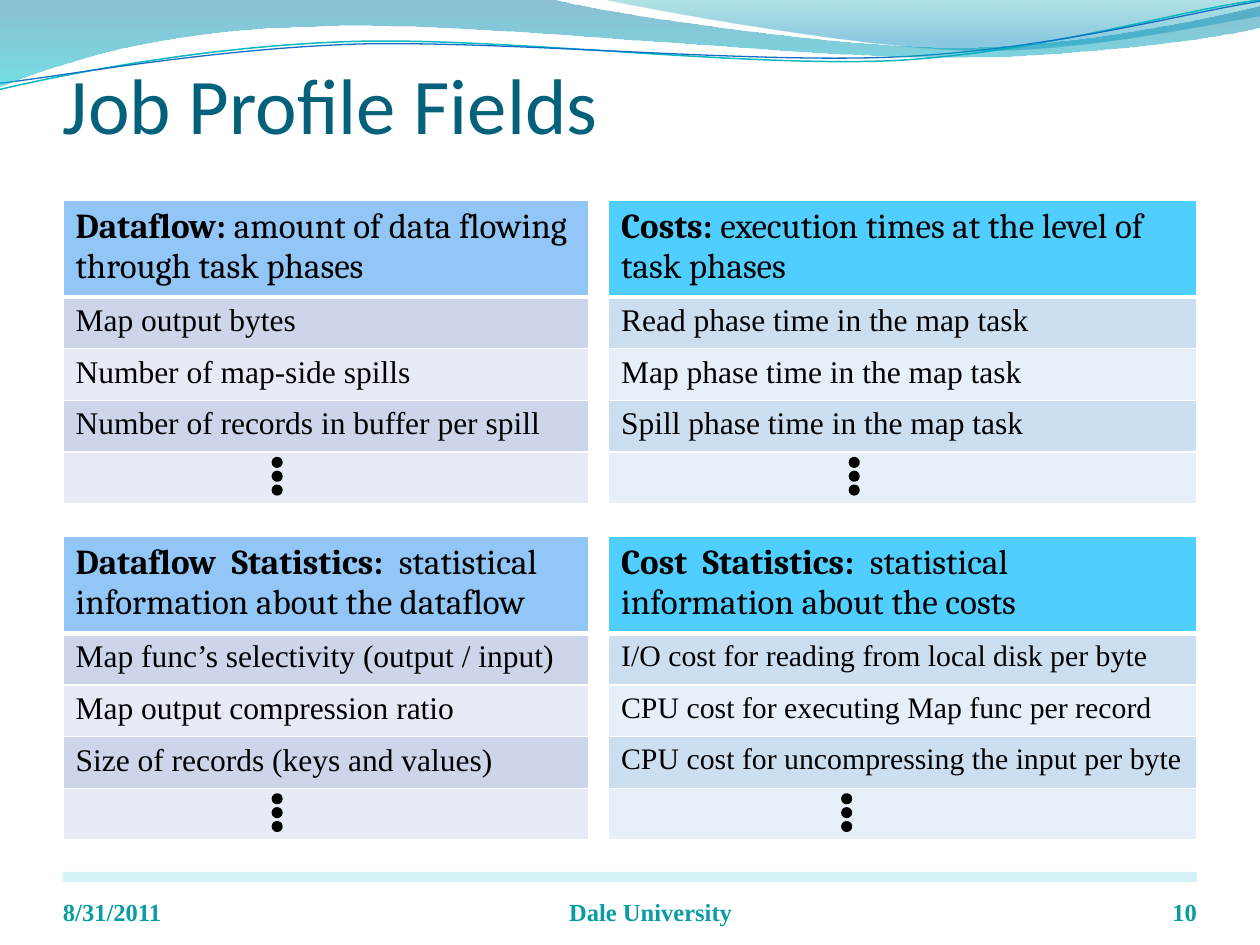
from lxml.etree import SubElement
from pptx import Presentation
from pptx.dml.color import RGBColor
from pptx.enum.shapes import MSO_SHAPE as Preset
from pptx.enum.text import MSO_ANCHOR as Anchor, PP_ALIGN as Align
from pptx.oxml import parse_xml
from pptx.oxml.ns import nsdecls, qn
from pptx.util import Inches, Pt

SERIF = "Times New Roman"
BLUE = ("91C6F7", "CCD5EA", "E7EBF5")
CYAN = ("4FCEFF", "CCDFF1", "E7EFF8")
HEADER_HEIGHT, ROW_HEIGHT = 0.72, 0.41

# left, top, width, palette, body size, dots left, heading, explanation, rows
TABLES = [
    (0.5, 1.59, 4.17, BLUE, 18, 2.17, "Dataflow: ",
     "amount of data flowing through task phases",
     ["Map output bytes", "Number of map-side spills",
      "Number of records in buffer per spill"]),
    (4.83, 1.59, 4.67, CYAN, 18, 6.75, "Costs: ",
     "execution times at the level of task phases",
     ["Read phase time in the map task", "Map phase time in the map task",
      "Spill phase time in the map task"]),
    (0.5, 4.26, 4.17, BLUE, 18, 2.17, "Dataflow  Statistics:  ",
     "statistical information about the dataflow",
     ["Map func’s selectivity (output / input)", "Map output compression ratio",
      "Size of records (keys and values)"]),
    (4.83, 4.26, 4.67, CYAN, 17, 6.69, "Cost  Statistics:  ",
     "statistical information about the costs",
     ["I/O cost for reading from local disk per byte",
      "CPU cost for executing Map func per record",
      "CPU cost for uncompressing the input per byte"]),
]

# Each outline step is a line end (2 numbers) or a Bezier curve (6 numbers)
LIGHT_WAVE = [(4.79, 0), (5.09, 0.07, 6.82, 0.38, 7.69, 0.4),
              (8.56, 0.42, 9.61, 0.19, 10, 0.13), (10, 0)]
TEAL_LINE = [(0, 0.71), (0.47, 0.6, 1.58, 0.37, 2.77, 0.33),
             (3.96, 0.29, 5.92, 0.54, 7.12, 0.48),
             (8.32, 0.41, 9.39, 0.07, 10, 0)]
BLUE_LINE = [(0, 0.66), (0.47, 0.61, 1.64, 0.39, 2.83, 0.35),
             (4.03, 0.32, 5.97, 0.51, 7.16, 0.45),
             (8.36, 0.39, 9.42, 0.1, 10, 0.01)]
DARK_WAVE = [(0, 0), (4.4, 0), (4.76, 0.1, 6.64, 0.38, 7.58, 0.38),
             (8.53, 0.38, 9.58, 0.15, 10, 0.05), (10, 0.22),
             (9.83, 0.27, 8.7, 0.46, 7.46, 0.46),
             (6.22, 0.46, 3.82, 0.17, 2.57, 0.21),
             (1.29, 0.22, 0.46, 0.51, 0, 0.69)]


def color(code):
    return RGBColor.from_string(code)


def set_opacity(shape, percents):
    """Give the shape's fill colours their opacities, in order."""
    for tint, percent in zip(shape._element.spPr.iter(qn("a:srgbClr")), percents):
        SubElement(tint, qn("a:alpha"), val=str(percent * 1000))


def add_outline(page, steps, close):
    """Draw straight segments, then turn the curved steps into Beziers."""
    ends = [(Inches(step[-2]), Inches(step[-1])) for step in steps]
    builder = page.shapes.build_freeform(*ends[0])
    builder.add_line_segments(ends[1:], close=close)
    shape = builder.convert_to_shape()
    shape.shadow.inherit = False
    segments = list(shape._element.spPr.iter(qn("a:lnTo")))
    for segment, step in zip(segments, steps[1:]):
        if len(step) == 6:
            segment.tag = qn("a:cubicBezTo")
            for index, (x, y) in enumerate((step[:2], step[2:4])):
                control = segment.makeelement(qn("a:pt"), {
                    "x": str(Inches(x) - shape.left),
                    "y": str(Inches(y) - shape.top)})
                segment.insert(index, control)
    return shape


def add_wave(page, steps, stops):
    shape = add_outline(page, steps, True)
    shape.line.fill.background()
    shape.fill.gradient()
    shape.fill.gradient_angle = 270
    for stop, (position, code, _) in zip(shape.fill.gradient_stops, stops):
        stop.position = position
        stop.color.rgb = color(code)
    set_opacity(shape, [opacity for _, _, opacity in stops])


def add_curve(page, steps, code, width):
    shape = add_outline(page, steps, False)
    shape.fill.background()
    shape.line.color.rgb = color(code)
    shape.line.width = Pt(width)


def add_preset(page, preset, left, top, width, height, code):
    shape = page.shapes.add_shape(
        preset, Inches(left), Inches(top), Inches(width), Inches(height))
    shape.shadow.inherit = False
    shape.fill.solid()
    shape.fill.fore_color.rgb = color(code)
    shape.line.fill.background()
    return shape


def set_font(font, name, size, code, bold=None):
    font.name, font.size, font.bold = name, Pt(size), bold
    font.color.rgb = color(code)


def add_text(page, left, top, width, height, text, name, size, code,
             bold=False, align=Align.LEFT, anchor=Anchor.BOTTOM, inset=0):
    box = page.shapes.add_textbox(
        Inches(left), Inches(top), Inches(width), Inches(height))
    frame = box.text_frame
    frame.word_wrap, frame.vertical_anchor = True, anchor
    frame.margin_left = frame.margin_right = frame.margin_bottom = 0
    frame.margin_top = Inches(inset)
    para = frame.paragraphs[0]
    para.text, para.alignment = text, align
    set_font(para.font, name, size, code, bold)


def style_cell(cell, code, top=1, bottom=1):
    """Fill the cell and draw its white borders."""
    cell.fill.solid()
    cell.fill.fore_color.rgb = color(code)
    borders = zip(("lnL", "lnR", "lnT", "lnB"), (1, 1, top, bottom))
    for index, (side, width) in enumerate(borders):
        cell._tc.get_or_add_tcPr().insert(index, parse_xml(
            f'<a:{side} {nsdecls("a")} w="{Pt(width)}"><a:solidFill>'
            f'<a:srgbClr val="FFFFFF"/></a:solidFill></a:{side}>'))


def add_profile_table(page, left, top, width, palette, size, heading,
                      explanation, rows):
    header_fill, *bands = palette
    height = HEADER_HEIGHT + ROW_HEIGHT * (len(rows) + 1)
    table = page.shapes.add_table(
        len(rows) + 2, 1, Inches(left), Inches(top),
        Inches(width), Inches(height)).table

    # Heading with its bold term
    table.rows[0].height = Inches(HEADER_HEIGHT)
    header = table.cell(0, 0)
    para = header.text_frame.paragraphs[0]
    for text, bold in ((heading, True), (explanation, False)):
        span = para.add_run()
        span.text = text
        set_font(span.font, "Cambria", 20, "000000", bold)
    style_cell(header, header_fill, bottom=3)

    # Fields, then an empty row for the dots
    for index, text in enumerate(rows + [""], 1):
        table.rows[index].height = Inches(ROW_HEIGHT)
        cell = table.cell(index, 0)
        if text:
            para = cell.text_frame.paragraphs[0]
            para.text = text
            set_font(para.font, SERIF, size, "000000", False)
        style_cell(cell, bands[(index - 1) % 2], top=3 if index == 1 else 1)


def add_dots(page, left, top):
    for index in range(3):
        dot = add_preset(page, Preset.OVAL, left, top + 0.11 * index,
                         0.06, 0.06, "000000")
        dot.line.color.rgb = color("000000")
        dot.line.width = Pt(2)


def main():
    deck = Presentation()
    deck.slide_width, deck.slide_height = Inches(10), Inches(7.5)
    page = deck.slides.add_slide(deck.slide_layouts[6])
    # Background decoration
    bar = add_preset(page, Preset.RECTANGLE, 0.5, 6.92, 9, 0.08, "B3EAF2")
    set_opacity(bar, [55])
    add_wave(page, LIGHT_WAVE, [(0, "00A1A9", 30), (0.8, "008BBF", 45)])
    add_curve(page, TEAL_LINE, "0AB8BF", 0.85)
    add_curve(page, BLUE_LINE, "0F6FC6", 0.75)
    add_wave(page, DARK_WAVE, [(0, "0074A1", 45), (1, "00C6CF", 55)])
    # Title and footer
    add_text(page, 0.5, 0.33, 9, 0.92, "Job Profile Fields", "Calibri", 45,
             "04617B", anchor=Anchor.MIDDLE, inset=0.05)
    for left, width, text, align in (
            (0.5, 2.33, "8/31/2011", Align.LEFT),
            (3.33, 3.67, "Dale University", Align.CENTER),
            (8.67, 0.83, "10", Align.RIGHT)):
        add_text(page, left, 6.95, width, 0.4, text, SERIF, 14, "089CA3",
                 bold=True, align=align)
    # Tables with their continuation dots
    for left, top, width, palette, size, dots_left, *content in TABLES:
        add_profile_table(page, left, top, width, palette, size, *content)
        add_dots(page, dots_left, top + 2.05)
    deck.save("out.pptx")


if __name__ == "__main__":
    main()
